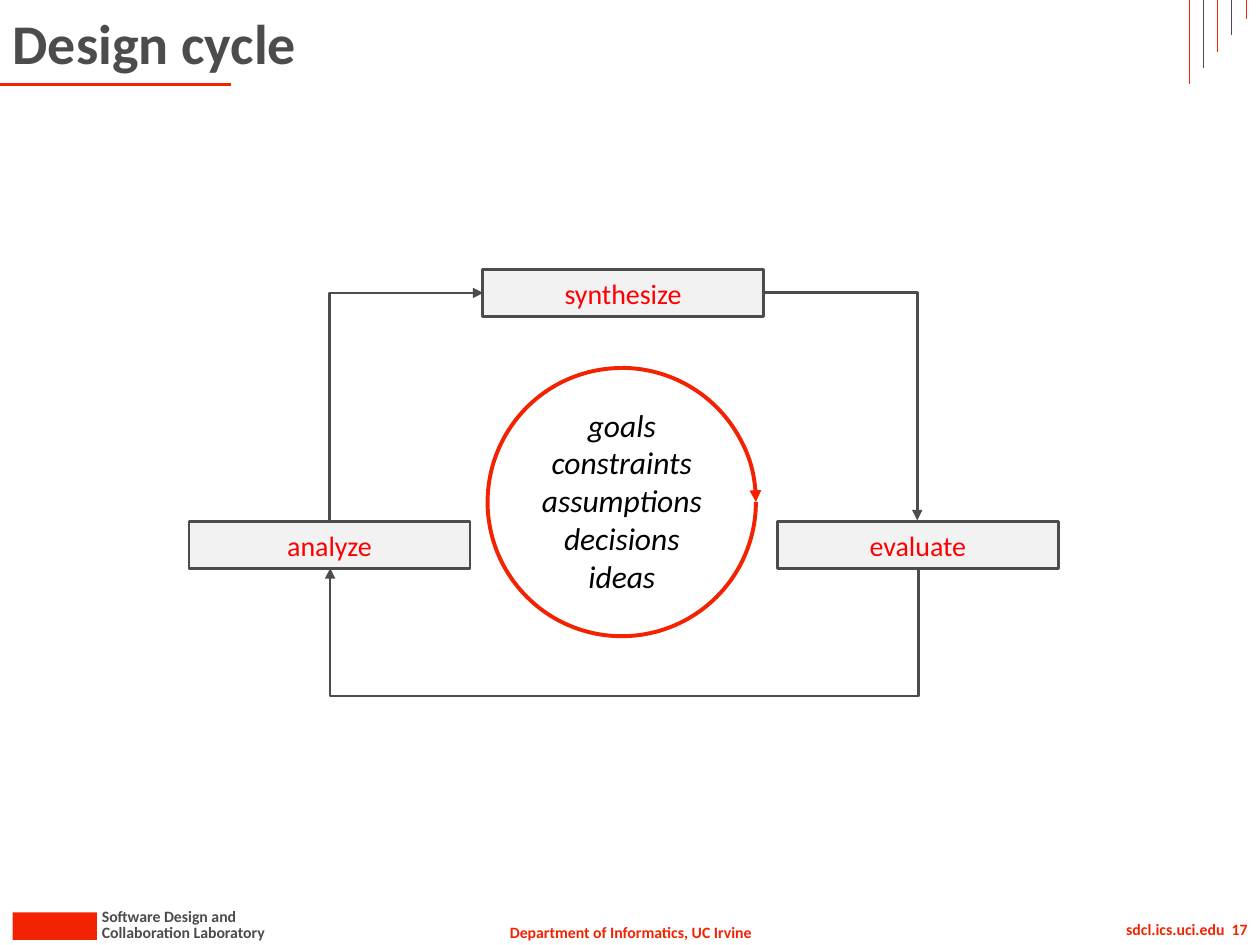
import pptx
import pptx.util
import pptx.dml.color
import pptx.enum.shapes
import pptx.enum.text
import pptx.oxml
import pptx.oxml.ns

Inches = pptx.util.Inches
ALIGN = pptx.enum.text.PP_ALIGN
ANCHOR = pptx.enum.text.MSO_ANCHOR
SHAPE = pptx.enum.shapes.MSO_SHAPE
LINK = pptx.enum.shapes.MSO_CONNECTOR
qn = pptx.oxml.ns.qn

RED, GREY = "F32200", "4C4C4C"
NOTE = {"size": 9, "bold": True, "color": RED}


def rgb(code):
    return pptx.dml.color.RGBColor.from_string(code)


def place(item, box):
    for name, value in zip(("left", "top", "width", "height"), box):
        setattr(item, name, Inches(value))


def write(frame, lines, form, align=ALIGN.LEFT, anchor=ANCHOR.TOP, wrap=True):
    frame.word_wrap = wrap
    frame.vertical_anchor = anchor
    frame.text = "\n".join(lines)
    for para in frame.paragraphs:
        para.alignment = align
        para.font.name = "Calibri"
        for name, value in form.items():
            if name == "color":
                para.font.color.rgb = rgb(value)
            else:
                setattr(para.font, name, pptx.util.Pt(value) if name == "size" else value)


def label(slide, box, lines, form, align=ALIGN.LEFT, wrap=False):
    item = slide.shapes.add_textbox(*map(Inches, box))
    write(item.text_frame, lines, form, align, wrap=wrap)


def stroke(item, color, width, arrow=False):
    item.line.color.rgb = rgb(color)
    item.line.width = pptx.util.Pt(width)
    if arrow:
        tail = pptx.oxml.parse_xml(f'<a:tailEnd {pptx.oxml.ns.nsdecls("a")} type="triangle"/>')
        item.line._get_or_add_ln().append(tail)


def turn(item, angle, flips):
    """Rotate by degrees and mirror along the axes named in flips (H, V)."""
    frame = item._element.spPr.find(qn("a:xfrm"))
    frame.set("rot", str(angle * 60000))
    for axis in "HV":
        frame.set("flip" + axis, str(int(axis in flips)))


def join(slide, kind, ends, color, width, arrow=False):
    item = slide.shapes.add_connector(kind, *map(Inches, ends))
    stroke(item, color, width, arrow)
    item._element.spPr.append(pptx.oxml.parse_xml(f'<a:effectLst {pptx.oxml.ns.nsdecls("a")}/>'))
    return item


def elbow(slide, start, end, box, angle=0, flips="", bend=None):
    """Arrow between two (shape, side) pairs; bend offsets a three-part route."""
    item = join(slide, LINK.ELBOW, (0, 0, 1, 1), GREY, 1.5, arrow=True)
    item.begin_connect(*start)
    item.end_connect(*end)
    place(item, box)
    turn(item, angle, flips)
    geom = item._element.spPr.find(qn("a:prstGeom"))
    if bend is None:
        geom.set("prst", "bentConnector2")
    else:
        guide = pptx.oxml.parse_xml(
            f'<a:gd {pptx.oxml.ns.nsdecls("a")} name="adj1" fmla="val {round(bend * 100000)}"/>')
        geom.get_or_add_avLst().append(guide)


def block(slide, box, fill):
    item = slide.shapes.add_shape(SHAPE.RECTANGLE, *map(Inches, box))
    item.shadow.inherit = False
    item.fill.solid()
    item.fill.fore_color.rgb = rgb(fill)
    return item


def stage(slide, name, left, top):
    item = block(slide, (left, top, 2.23, 0.37), "F2F2F2")
    stroke(item, GREY, 1.5)
    write(item.text_frame, [name], {"size": 16, "color": "FF0000"}, ALIGN.CENTER, ANCHOR.MIDDLE)
    return item


def ring(slide):
    """Circle of four quarter arcs, the first ending in an arrowhead."""
    group = slide.shapes.add_group_shape()
    for angle, flips, arrow in ((0, "", True), (0, "V", False), (270, "", False), (90, "V", False)):
        arc = group.shapes.add_shape(SHAPE.ARC, *map(Inches, (3.87, 2.92, 2.13, 2.13)))
        arc.shadow.inherit = False
        arc.fill.background()
        stroke(arc, RED, 2.25, arrow)
        turn(arc, angle, flips)


def frame(slide):
    """Footer, title rule and corner ticks."""
    label(slide, (3.93, 7.27, 2.15, 0.25), ["Department of Informatics, UC Irvine"], NOTE, ALIGN.CENTER)
    block(slide, (0.1, 7.24, 0.67, 0.22), RED).line.fill.background()
    for top, width, text in ((7.27, 1.53, "Collaboration Laboratory"), (7.15, 1.29, "Software Design and")):
        label(slide, (0.71, top, width, 0.25), [text], {**NOTE, "color": GREY})
    label(slide, (7.84, 7.25, 2.16, 0.25), ["sdcl.ics.uci.edu  17"], NOTE, ALIGN.RIGHT, wrap=True)
    join(slide, LINK.STRAIGHT, (0, 0.67, 1.83, 0.67), RED, 1.5)
    for i in range(5):
        x = 9.44 + 0.45 * i / 4
        join(slide, LINK.STRAIGHT, (x, 0.67 - 0.13 * i, x, 0), GREY if i % 2 else RED, 0.5)


def main():
    deck = pptx.Presentation()
    deck.slide_width, deck.slide_height = Inches(10), Inches(7.5)
    slide = deck.slides.add_slide(deck.slide_layouts[5])
    frame(slide)

    title = slide.shapes.title
    place(title, (0, 0, 9, 0.67))
    write(title.text_frame, ["Design cycle"], {"size": 32, "bold": True, "color": GREY},
          anchor=ANCHOR.MIDDLE)

    study = stage(slide, "analyze", 1.5, 4.14)
    judge = stage(slide, "evaluate", 6.17, 4.14)
    make = stage(slide, "synthesize", 3.83, 2.14)
    elbow(slide, (study, 0), (make, 1), (2.32, 2.62, 1.81, 1.22), 90, "HV")
    elbow(slide, (make, 3), (judge, 0), (6.06, 2.32, 1.22, 1.81))
    elbow(slide, (judge, 2), (study, 2), (4.95, 2.17, 0.01, 4.67), 90, bend=104)

    ring(slide)
    label(slide, (4.19, 3.17, 1.49, 1.62),
          ["goals", "constraints", "assumptions", "decisions", "ideas"],
          {"size": 18, "italic": True, "color": "000000"}, ALIGN.CENTER)
    deck.save("out.pptx")


if __name__ == "__main__":
    main()
